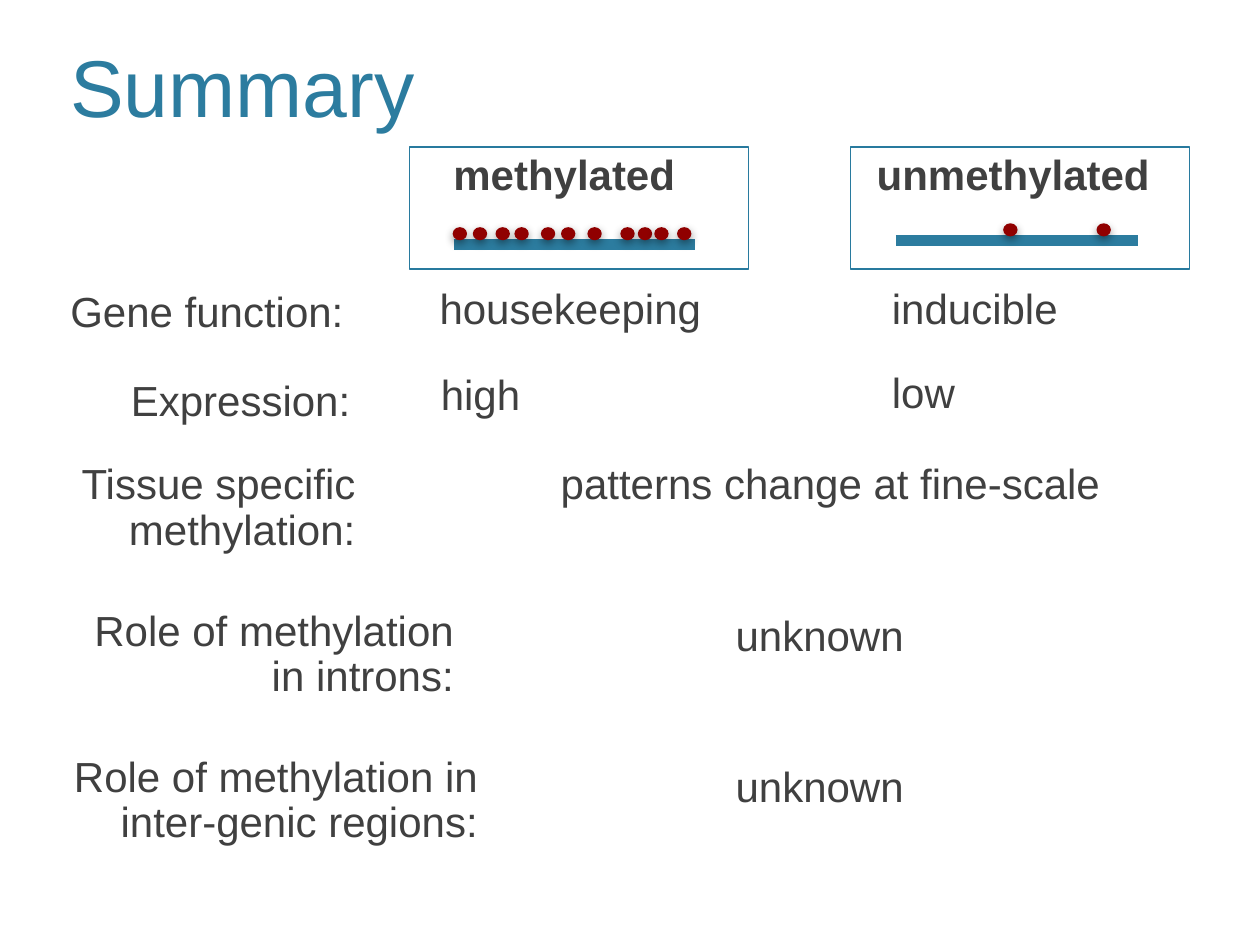
from lxml.etree import SubElement
from pptx import Presentation
from pptx.dml.color import RGBColor
from pptx.enum.shapes import MSO_CONNECTOR, MSO_SHAPE
from pptx.enum.text import MSO_ANCHOR, PP_ALIGN
from pptx.oxml.ns import qn
from pptx.util import Pt

TEAL = RGBColor(0x2C, 0x7C, 0x9F)
BORDER = RGBColor(0x28, 0x7A, 0x9E)
GREY = RGBColor(0x40, 0x40, 0x40)
RED = RGBColor(0x90, 0x00, 0x00)
LEFT, CENTER, RIGHT = PP_ALIGN.LEFT, PP_ALIGN.CENTER, PP_ALIGN.RIGHT

METHYLATED_SITES = (0, 11.5, 24.5, 35.3, 50.4, 61.9, 77, 95.8, 105.8, 115.2, 128.2)
UNMETHYLATED_SITES = (61.9, 115.2)

# text, box in points, alignment, line spacing
ROW_TEXTS = (
    ("Gene function:", (33.1, 162.7, 200.9, 40.3), LEFT, 0.9),
    ("housekeeping", (244.1, 163.4, 185, 32.4), LEFT, 0.8),
    ("inducible", (502.6, 163.4, 185, 32.4), LEFT, 0.8),
    ("Expression:", (67.7, 216, 149.8, 32.4), LEFT, 0.8),
    ("high", (244.8, 212.4, 185, 32.4), LEFT, 0.8),
    ("low", (502.6, 211.7, 185, 32.4), LEFT, 0.8),
    ("Tissue specific methylation:", (25.2, 261.4, 185, 51.1), RIGHT, 0.9),
    ("patterns change at fine-scale", (290.2, 261.4, 368.6, 56.9), CENTER, 0.9),
    ("Role of methylation in introns:", (23.5, 344.9, 242.9, 83.5), RIGHT, 0.9),
    ("unknown", (413.3, 347.8, 161.3, 51.1), LEFT, 0.9),
    ("Role of methylation in inter-genic regions:", (0, 428.4, 280.1, 51.1), RIGHT, 0.9),
    ("unknown", (413.3, 434.2, 220.3, 46.1), LEFT, 0.9),
)


def add_text(slide, text, box, align=LEFT, spacing=0.8, bold=False):
    tf = slide.shapes.add_textbox(*map(Pt, box)).text_frame
    tf.word_wrap = True
    p = tf.paragraphs[0]
    p.text = text
    p.alignment = align
    p.line_spacing = spacing
    p.space_before = Pt(12)
    p.font.name = "Arial"
    p.font.size = Pt(24)
    p.font.bold = bold
    p.font.color.rgb = GREY
    return tf


def add_title(slide, text, box):
    tf = add_text(slide, text, box, spacing=1.0)
    tf.vertical_anchor = MSO_ANCHOR.BOTTOM
    p = tf.paragraphs[0]
    p.space_before = Pt(0)
    p.font.size = Pt(46)
    p.font.color.rgb = TEAL


def add_soft_shadow(sp):
    effects = SubElement(sp._element.spPr, qn("a:effectLst"))
    shadow = SubElement(effects, qn("a:outerShdw"), blurRad=str(Pt(5)),
                        dist=str(Pt(2)), dir="5400000", rotWithShape="0")
    color = SubElement(shadow, qn("a:srgbClr"), val="000000")
    SubElement(color, qn("a:alpha"), val="40000")


def add_gene(slide, x, y, sites):
    """Draw a gene as a bar from (x, y), with a dot at each methylated site."""
    shapes = slide.shapes.add_group_shape().shapes
    bar = shapes.add_connector(MSO_CONNECTOR.STRAIGHT, Pt(x), Pt(y), Pt(x + 138.2), Pt(y))
    bar.line.color.rgb = TEAL
    bar.line.width = Pt(6)
    SubElement(bar._element.spPr, qn("a:effectLst"))
    for site in sites:
        dot = shapes.add_shape(MSO_SHAPE.OVAL, Pt(x + site), Pt(y - 9.4), Pt(7.2), Pt(6.5))
        dot.fill.solid()
        dot.fill.fore_color.rgb = RED
        dot.line.color.rgb = RED
        dot.line.width = Pt(1)
        add_soft_shadow(dot)


def add_gene_panel(slide, box, heading, heading_dx, gene_dx, gene_dy, sites):
    x, y, w, h = box
    add_gene(slide, x + gene_dx, y + gene_dy, sites)
    add_text(slide, heading, (x + heading_dx, y + 2.9, 185, 32.4), bold=True)
    frame = slide.shapes.add_shape(MSO_SHAPE.RECTANGLE, *map(Pt, box))
    frame.shadow.inherit = False
    frame.fill.background()
    frame.line.color.rgb = BORDER
    frame.line.width = Pt(1)


def main():
    prs = Presentation()
    prs.slide_width, prs.slide_height = Pt(720), Pt(540)
    slide = prs.slides.add_slide(prs.slide_layouts[6])
    add_title(slide, "Summary", (33.1, -25.2, 633.6, 105.1))
    add_gene_panel(slide, (234, 84.2, 193.7, 69.8), "methylated",
                   18, 25.2, 55.5, METHYLATED_SITES)
    add_gene_panel(slide, (486, 84.2, 193.7, 69.8), "unmethylated",
                   7.9, 25.9, 53.3, UNMETHYLATED_SITES)
    for text, box, align, spacing in ROW_TEXTS:
        add_text(slide, text, box, align, spacing)
    prs.save("out.pptx")


if __name__ == "__main__":
    main()
